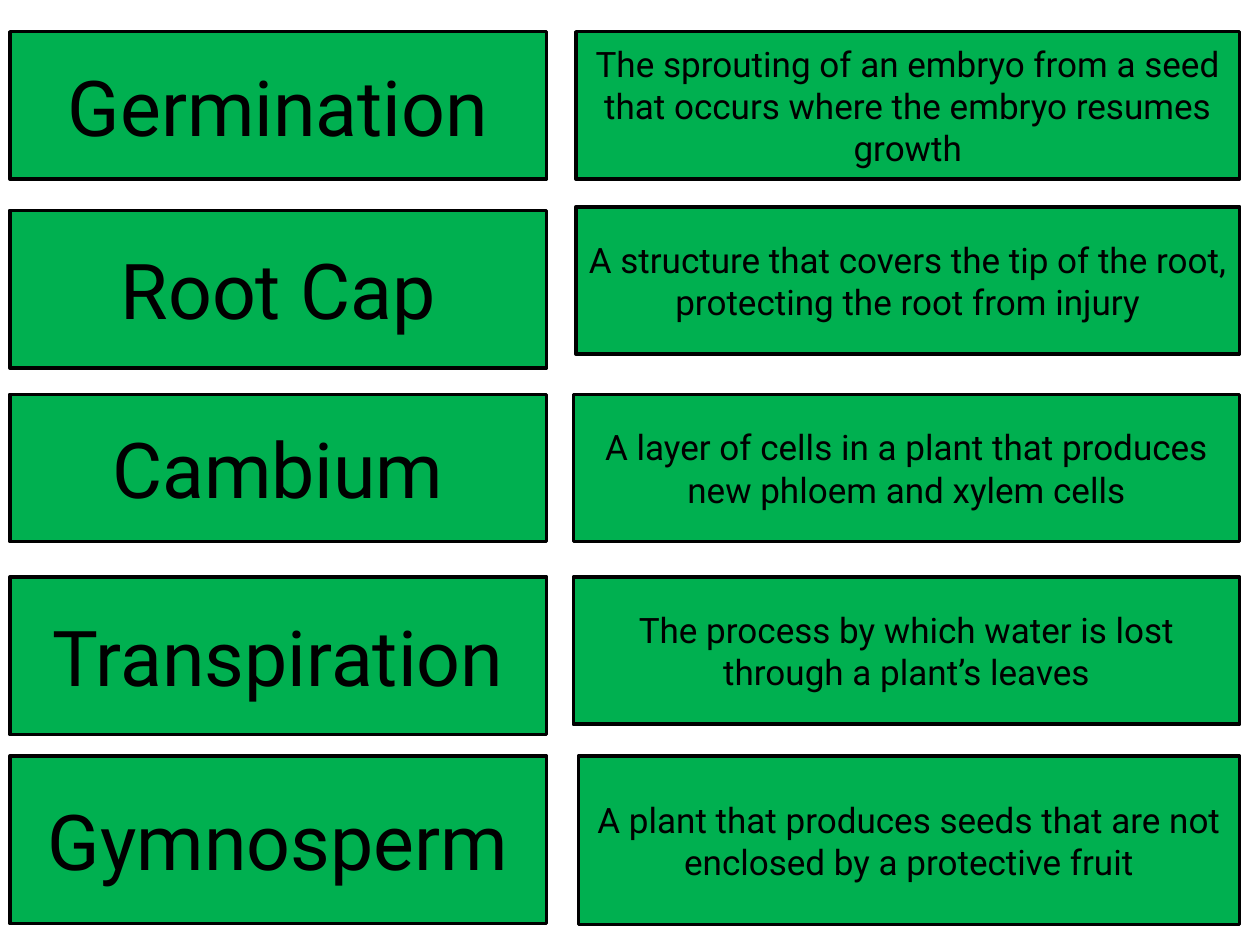
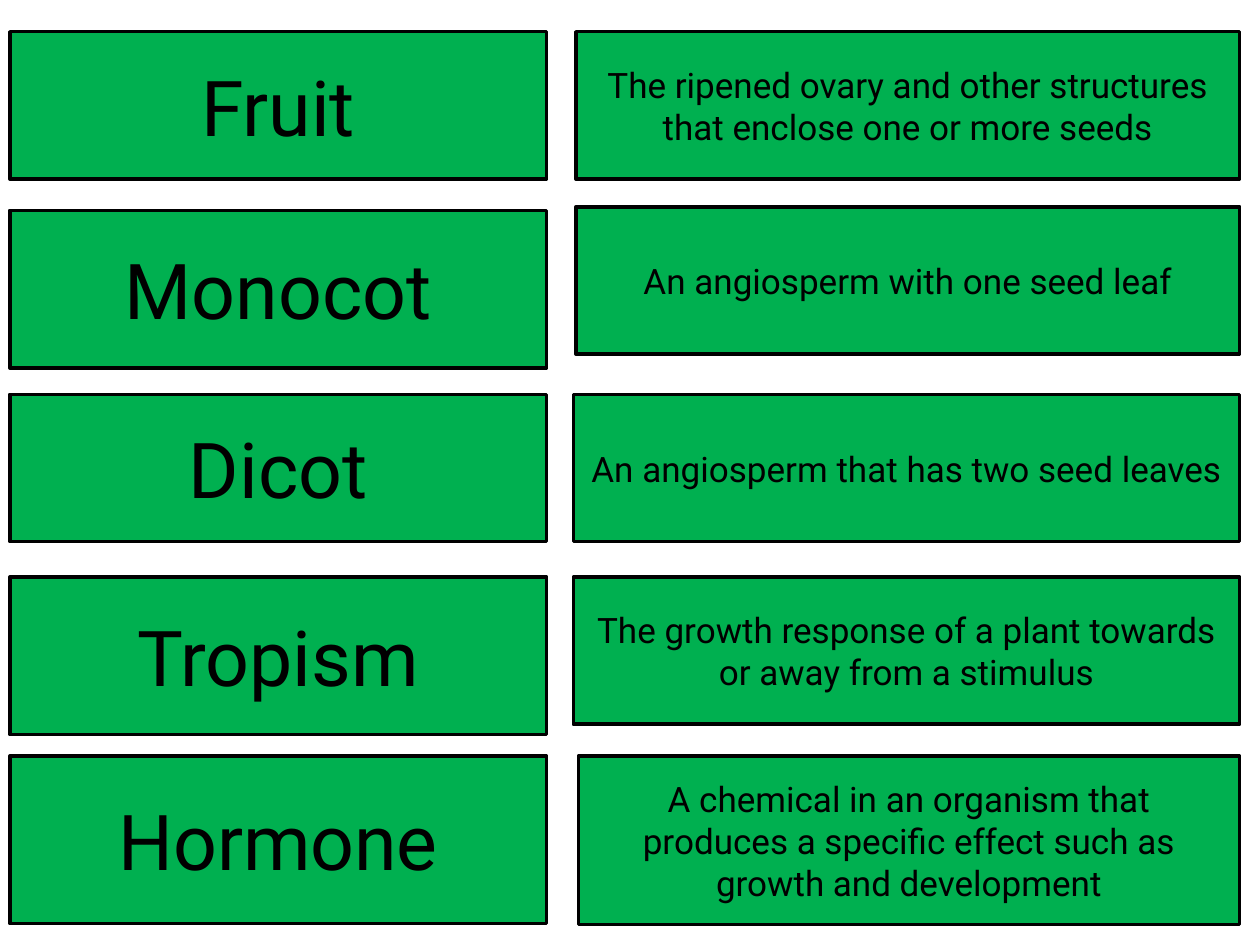
from dataclasses import dataclass

from pptx import Presentation
from pptx.dml.color import RGBColor
from pptx.enum.shapes import MSO_SHAPE
from pptx.enum.text import MSO_ANCHOR, PP_ALIGN
from pptx.shapes.autoshape import Shape
from pptx.slide import Slide
from pptx.util import Cm, Pt

PROCESS = MSO_SHAPE.FLOWCHART_PROCESS
MIDDLE = MSO_ANCHOR.MIDDLE
CENTER = PP_ALIGN.CENTER

GREEN = RGBColor(0x00, 0xB0, 0x50)
BLACK = RGBColor(0x00, 0x00, 0x00)
FONT = "Roboto"
TERM_SIZE = 44
DEFINITION_SIZE = 20
OUTLINE_WIDTH = 2
BLANK_LAYOUT = 6

TERM_LEFT = 0.2
TERM_WIDTH = 10.82
DEFINITION_RIGHT = 24.99


@dataclass(frozen=True)
class Box:
    left: float
    top: float
    width: float
    height: float


@dataclass(frozen=True)
class Entry:
    term: str
    definition: str


def term_box(top: float, height: float) -> Box:
    return Box(TERM_LEFT, top, TERM_WIDTH, height)


def definition_box(left: float, top: float, height: float) -> Box:
    return Box(left, top, DEFINITION_RIGHT - left, height)


ROWS = [
    (term_box(0.64, 2.97), definition_box(11.61, 0.64, 2.97)),
    (term_box(4.24, 3.18), definition_box(11.61, 4.17, 2.97)),
    (term_box(7.95, 2.97), definition_box(11.56, 7.95, 2.97)),
    (term_box(11.63, 3.18), definition_box(11.56, 11.63, 2.97)),
    (term_box(15.24, 3.38), definition_box(11.66, 15.24, 3.4)),
]

GLOSSARY = [
    [
        Entry("Germination", "The sprouting of an embryo from a seed that occurs "
              "where the embryo resumes growth"),
        Entry("Root Cap", "A structure that covers the tip of the root, "
              "protecting the root from injury"),
        Entry("Cambium", "A layer of cells in a plant that produces new phloem "
              "and xylem cells"),
        Entry("Transpiration", "The process by which water is lost through a "
              "plant’s leaves"),
        Entry("Gymnosperm", "A plant that produces seeds that are not enclosed "
              "by a protective fruit"),
    ],
    [
        Entry("Fruit", "The ripened ovary and other structures that enclose one "
              "or more seeds"),
        Entry("Monocot", "An angiosperm with one seed leaf"),
        Entry("Dicot", "An angiosperm that has two seed leaves"),
        Entry("Tropism", "The growth response of a plant towards or away from a "
              "stimulus"),
        Entry("Hormone", "A chemical in an organism that produces a specific "
              "effect such as growth and development"),
    ],
]


def write_text(shape: Shape, text: str, *, size: float, font: str = FONT,
               color: RGBColor = BLACK) -> None:
    frame = shape.text_frame
    frame.word_wrap = True
    frame.vertical_anchor = MIDDLE
    paragraph = frame.paragraphs[0]
    paragraph.alignment = CENTER
    run = paragraph.add_run()
    run.text = text
    run.font.name = font
    run.font.size = Pt(size)
    run.font.color.rgb = color


def add_card(slide: Slide, box: Box, text: str, size: float) -> None:
    shape = slide.shapes.add_shape(
        PROCESS, Cm(box.left), Cm(box.top), Cm(box.width), Cm(box.height))
    shape.shadow.inherit = False
    shape.fill.solid()
    shape.fill.fore_color.rgb = GREEN
    shape.line.color.rgb = BLACK
    shape.line.width = Pt(OUTLINE_WIDTH)
    write_text(shape, text, size=size)


def main() -> None:
    presentation = Presentation()
    presentation.slide_width = Cm(25.4)
    presentation.slide_height = Cm(19.05)
    for entries in GLOSSARY:
        slide = presentation.slides.add_slide(presentation.slide_layouts[BLANK_LAYOUT])
        for entry, (term_area, definition_area) in zip(entries, ROWS):
            add_card(slide, term_area, entry.term, TERM_SIZE)
            add_card(slide, definition_area, entry.definition, DEFINITION_SIZE)
    presentation.save("out.pptx")


if __name__ == "__main__":
    main()
